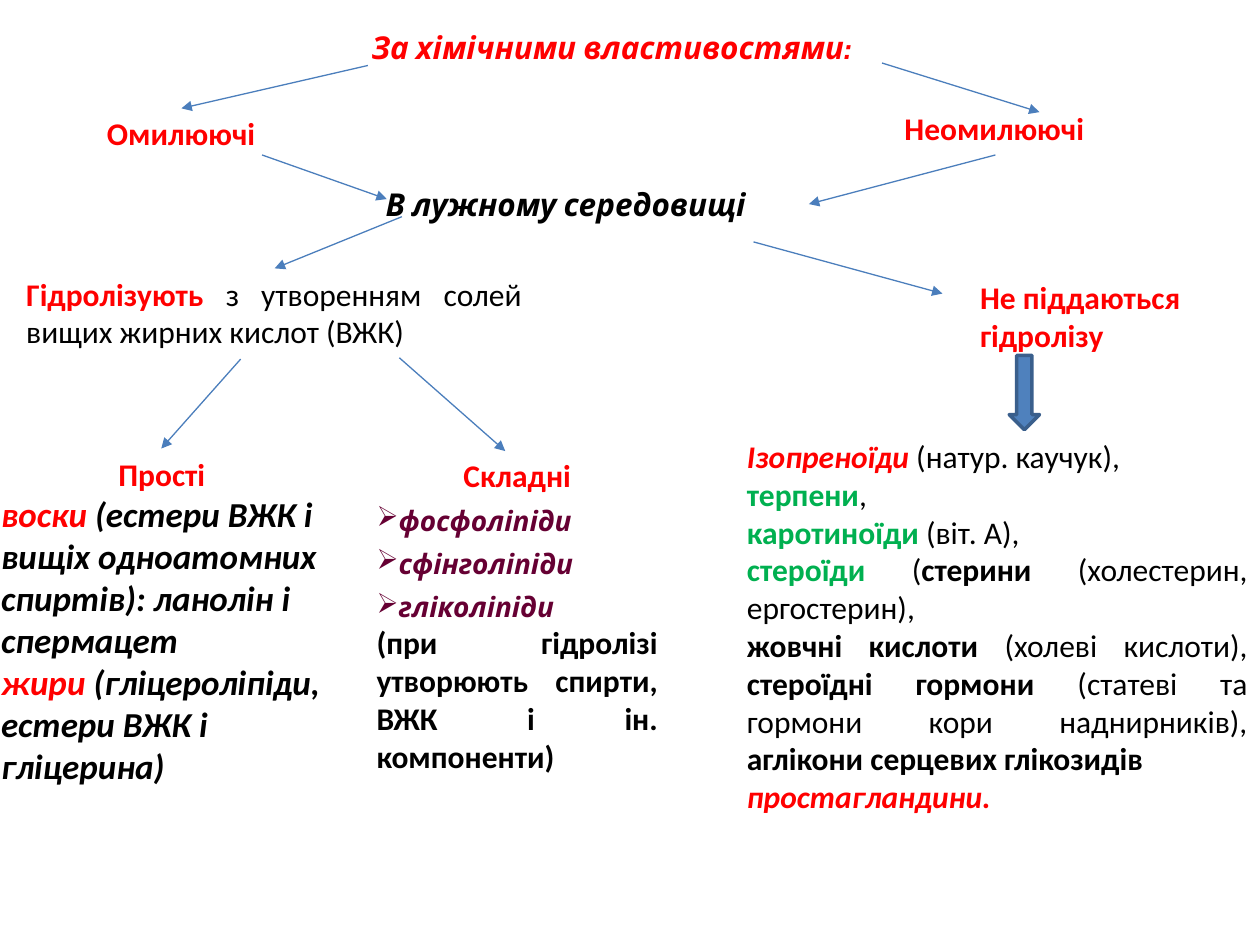
from lxml.etree import SubElement
from pptx import Presentation
from pptx.dml.color import RGBColor
from pptx.enum.shapes import MSO_CONNECTOR as Connector, MSO_SHAPE as Shape
from pptx.enum.text import PP_ALIGN as Align
from pptx.oxml.ns import qn
from pptx.util import Inches, Pt

RED, GREEN, PLUM, BLACK = "FF0000", "00B050", "660033", "000000"
COLUMNS, ROWS = 100, 75

deck = Presentation()
deck.slide_width, deck.slide_height = Inches(10), Inches(7.5)
column, row = deck.slide_width / COLUMNS, deck.slide_height / ROWS
slide = deck.slides.add_slide(deck.slide_layouts[6])


def paint(target, color):
    target.solid()
    target.fore_color.rgb = RGBColor.from_string(color)


def add_text(place, paragraphs, wrap=True):
    left, top, width, height = place
    box = slide.shapes.add_textbox(
        int(left * column), int(top * row), int(width * column), int(height * row)
    )
    frame = box.text_frame
    frame.word_wrap = wrap
    for index, (align, size, font, runs) in enumerate(paragraphs):
        paragraph = frame.add_paragraph() if index else frame.paragraphs[0]
        paragraph.alignment = align
        paragraph.font.size, paragraph.font.name = Pt(size), font
        for words, color, style in runs:
            run = paragraph.add_run()
            run.text = words
            run.font.size, run.font.name = Pt(size), font
            run.font.bold, run.font.italic = "b" in style, "i" in style
            paint(run.font.fill, color)
    return frame


headings = [
    ((24.7, 1.7, 47.7, 8.6), "За хімічними властивостями:", RED, "Cabin", "bi", Align.CENTER, True),
    ((7.5, 8.6, 13.9, 4), "Омилюючі", RED, "Calibri", "b", Align.LEFT, False),
    ((70.8, 8.2, 16.4, 4), "Неомилюючі", RED, "Calibri", "b", Align.LEFT, False),
    ((19.9, 14.2, 50, 4), "В лужному середовищі", BLACK, "Cabin", "bi", Align.CENTER, True),
    ((76.8, 21.6, 20.8, 7.1), "Не піддаються гідролізу", RED, "Calibri", "b", Align.LEFT, True),
]
for place, words, color, font, style, align, wrap in headings:
    add_text(place, [(align, 18, font, [(words, color, style)])], wrap)

add_text((1.1, 21.3, 41.3, 7.1), [
    (Align.JUSTIFY, 18, "Calibri", [
        ("Гідролізують ", RED, "b"),
        ("з утворенням солей вищих жирних кислот (ВЖК)", BLACK, ""),
    ]),
])

unsaponifiable = [
    [("Ізопреноїди", RED, "bi"), (" (натур. каучук), ", BLACK, "")],
    [("терпени", GREEN, "b"), (", ", BLACK, "")],
    [("каротиноїди", GREEN, "b"), (" (віт. А), ", BLACK, "")],
    [
        ("стероїди ", GREEN, "b"), ("(", BLACK, ""), ("стерини", BLACK, "b"),
        (" (холестерин, ергостерин), ", BLACK, ""),
    ],
    [
        ("жовчні кислоти ", BLACK, "b"), ("(холеві кислоти), ", BLACK, ""),
        ("стероїдні гормони ", BLACK, "b"),
        ("(статеві та гормони кори наднирників), ", BLACK, ""),
        ("аглікони серцевих глікозидів ", BLACK, "b"),
    ],
    [("простагландини.", RED, "bi")],
]
add_text((58.3, 34.2, 41.7, 31.3), [(Align.JUSTIFY, 18, "Calibri", runs) for runs in unsaponifiable])

simple_lipids = [
    ("воски ", "(естери ВЖК і вищіх одноатомних спиртів): ланолін і спермацет"),
    ("жири ", "(гліцероліпіди, естери ВЖК і гліцерина)"),
]
add_text((-0.9, 35.6, 27.5, 30.6), [
    (Align.CENTER, 18, "Calibri", [("Прості", RED, "b")]),
    *[
        (Align.LEFT, 20, "Calibri", [(name, RED, "bi"), (detail, BLACK, "bi")])
        for name, detail in simple_lipids
    ],
])

complex_lipids = ["фосфоліпіди", "сфінголіпіди", "гліколіпіди"]
complex_frame = add_text((28.9, 35.7, 24.3, 28.3), [
    (Align.CENTER, 18, "Calibri", [("Складні", RED, "b")]),
    *[(Align.LEFT, 16, "Cabin", [(name, PLUM, "bi")]) for name in complex_lipids],
    (Align.JUSTIFY, 18, "Calibri", [
        ("(при гідролізі утворюють спирти, ВЖК і ін. компоненти)", BLACK, "b"),
    ]),
])
for paragraph in complex_frame.paragraphs[1:-1]:
    paragraph.space_before = Pt(5.5)
    properties = paragraph._p.get_or_add_pPr()
    bullet = properties.makeelement(qn("a:buChar"), {"char": "➢"})
    properties.find(qn("a:defRPr")).addprevious(bullet)

arrows = [
    (29.2, 5.2, 14.4, 8.6),
    (70, 5, 82.5, 8.9),
    (20.8, 12.3, 30.7, 15.8),
    (79, 12.3, 64.2, 16.2),
    (31.9, 17.2, 21.8, 21.3),
    (59.8, 19.2, 74.8, 23.3),
    (19.1, 28.5, 12.8, 35.6),
    (31.7, 28.4, 40.1, 35.8),
]
for start_x, start_y, end_x, end_y in arrows:
    arrow = slide.shapes.add_connector(
        Connector.STRAIGHT,
        int(start_x * column), int(start_y * row), int(end_x * column), int(end_y * row),
    )
    arrow.line.width = Pt(0.75)
    paint(arrow.line.fill, "4B7EBC")
    SubElement(arrow.line._get_or_add_ln(), qn("a:tailEnd"), type="triangle")
    SubElement(arrow._element.spPr, qn("a:effectLst"))

down_arrow = slide.shapes.add_shape(
    Shape.DOWN_ARROW, int(80.1 * column), int(28.2 * row), int(2.4 * column), int(5.9 * row)
)
down_arrow.shadow.inherit = False
paint(down_arrow.fill, "4F81BD")
paint(down_arrow.line.fill, "3A5F8C")
down_arrow.line.width = Pt(2)

deck.save("out.pptx")
